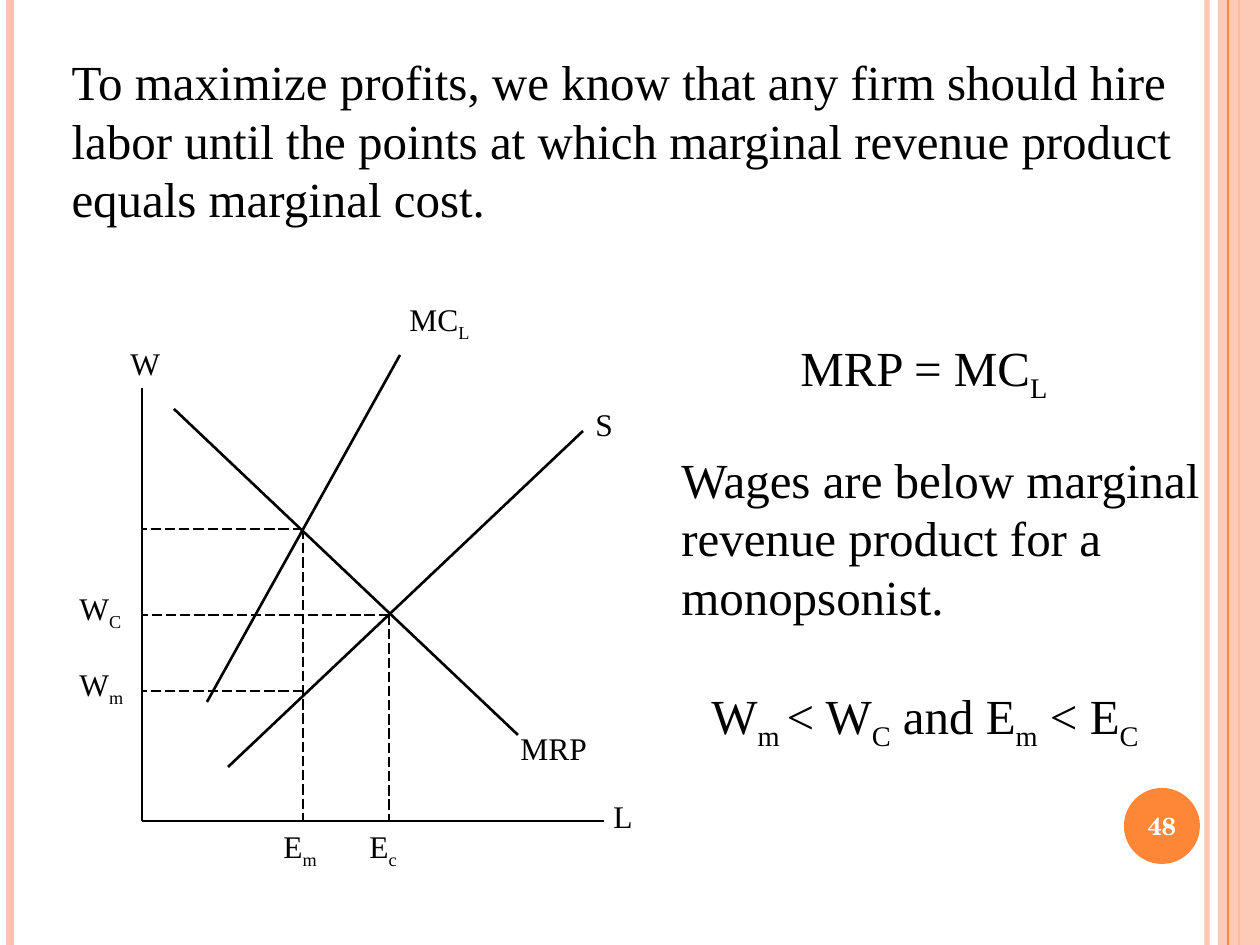
from typing import NamedTuple

from lxml import etree
from pptx import Presentation
from pptx.dml.color import RGBColor
from pptx.enum.dml import MSO_LINE
from pptx.enum.shapes import MSO_CONNECTOR, MSO_SHAPE
from pptx.enum.text import MSO_ANCHOR, MSO_AUTO_SIZE, PP_ALIGN
from pptx.oxml.ns import qn
from pptx.util import Emu, Pt

EMU_PER_PX = 914400 / 126
WIDTH, HEIGHT = 1260, 945
BLACK = RGBColor(0x00, 0x00, 0x00)
WHITE = RGBColor(0xFF, 0xFF, 0xFF)
ORANGE = RGBColor(0xFE, 0x86, 0x37)
PEACH = RGBColor(0xFE, 0xC3, 0xAE)
SERIF = "Times New Roman"
NUMBER_FONT = "TeX Gyre Schola"
STRAIGHT = MSO_CONNECTOR.STRAIGHT
RECTANGLE, OVAL = MSO_SHAPE.RECTANGLE, MSO_SHAPE.OVAL
LONG_DASH = MSO_LINE.LONG_DASH
FIXED_SIZE = MSO_AUTO_SIZE.NONE
TOP, MIDDLE = MSO_ANCHOR.TOP, MSO_ANCHOR.MIDDLE
LEFT, CENTER = PP_ALIGN.LEFT, PP_ALIGN.CENTER
BODY_SIZE, LABEL_SIZE = 28, 18


class Line(NamedTuple):
    x1: int
    y1: int
    x2: int
    y2: int
    width: float = 1.5
    color: RGBColor = BLACK
    dashed: bool = False
    opacity: int = 100


class Label(NamedTuple):
    """Text in which every second piece is a subscript."""
    x: int
    y: int
    w: int
    h: int
    pieces: tuple[str, ...]
    size: int = LABEL_SIZE
    wrap: bool = False
    anchor: MSO_ANCHOR = TOP
    align: PP_ALIGN = LEFT
    font: str = SERIF
    color: RGBColor = BLACK
    bold: bool = False


def px(value: int) -> Emu:
    return Emu(round(value * EMU_PER_PX))


def set_opacity(properties, percent: int) -> None:
    color = properties.find(".//" + qn("a:srgbClr"))
    etree.SubElement(color, qn("a:alpha"), val=str(percent * 1000))


def draw_line(slide, line: Line) -> None:
    ends = (px(v) for v in (line.x1, line.y1, line.x2, line.y2))
    connector = slide.shapes.add_connector(STRAIGHT, *ends)
    connector.line.width = Pt(line.width)
    connector.line.color.rgb = line.color
    if line.dashed:
        connector.line.dash_style = LONG_DASH
    properties = connector._element.spPr
    if line.opacity < 100:
        set_opacity(properties, line.opacity)
    etree.SubElement(properties, qn("a:effectLst"))


def draw_block(slide, kind: MSO_SHAPE, box: tuple[int, ...],
               color: RGBColor, opacity: int = 100) -> None:
    block = slide.shapes.add_shape(kind, *(px(v) for v in box))
    block.shadow.inherit = False
    block.fill.solid()
    block.fill.fore_color.rgb = color
    block.line.fill.background()
    if opacity < 100:
        set_opacity(block._element.spPr, opacity)


def write(shape, label: Label) -> None:
    shape.left, shape.top = px(label.x), px(label.y)
    shape.width, shape.height = px(label.w), px(label.h)
    frame = shape.text_frame
    frame.word_wrap = label.wrap
    frame.auto_size = FIXED_SIZE
    frame.vertical_anchor = label.anchor
    paragraph = frame.paragraphs[0]
    paragraph.alignment = label.align
    for index, piece in enumerate(label.pieces):
        run = paragraph.add_run()
        run.text = piece
        run.font.name = label.font
        run.font.size = Pt(label.size)
        run.font.bold = label.bold
        run.font.color.rgb = label.color
        if index % 2:
            run.font._element.set("baseline", "-25000")


def draw_label(slide, label: Label) -> None:
    write(slide.shapes.add_textbox(0, 0, 0, 0), label)


# Side bands and the page number's disc
SIDE_BANDS = (
    Line(1207, 0, 1207, HEIGHT, 3, PEACH, opacity=93),
    Line(10, 0, 10, HEIGHT, 4.5, PEACH),
)
OUTER_RULE = Line(1239, 0, 1239, HEIGHT, 1.5, ORANGE)
INNER_RULE = Line(1228, 0, 1228, HEIGHT, 0.75, ORANGE)
SIDE_PANEL = (1218, 0, 42, HEIGHT)
NUMBER_DISC = (1124, 788, 76, 76)

# Graph: axes, curves and the guides from each equilibrium
AXIS_X, AXIS_Y = 142, 821
MONOPSONY_X, COMPETITIVE_X = 303, 389
MRP_WAGE_Y, COMPETITIVE_Y, MONOPSONY_Y = 529, 615, 691
AXES = (Line(AXIS_X, AXIS_Y, AXIS_X, 388), Line(AXIS_X, AXIS_Y, 604, AXIS_Y))
CURVES = (
    Line(174, 409, 518, 735),  # MRP
    Line(228, 767, 583, 431),  # supply
    Line(207, 702, 400, 355),  # marginal cost of labor
)
WAGE_GUIDES = ((MONOPSONY_X, MRP_WAGE_Y), (COMPETITIVE_X, COMPETITIVE_Y),
               (MONOPSONY_X, MONOPSONY_Y))
LABOR_GUIDES = WAGE_GUIDES[:2]
GRAPH_LABELS = (
    Label(118, 338, 59, 55, ("W",)),
    Label(601, 791, 48, 55, ("L",)),
    Label(508, 723, 100, 55, ("MRP",)),
    Label(583, 399, 47, 55, ("S",)),
    Label(397, 294, 95, 55, ("MC", "L")),
    Label(271, AXIS_Y, 66, 55, ("E", "m")),
    Label(357, AXIS_Y, 58, 55, ("E", "c")),
    Label(67, 659, 77, 55, ("W", "m")),
    Label(67, 583, 74, 55, ("W", "C")),
)

# Statements
HEADLINE = Label(59, 45, 1142, 189, (
    "To maximize profits, we know that any firm should hire labor until the "
    "points at which marginal revenue product equals marginal cost.",),
    BODY_SIZE, wrap=True)
STATEMENTS = (
    Label(788, 335, 277, 72, ("MRP = MC", "L"), BODY_SIZE, anchor=MIDDLE),
    Label(669, 443, 566, 189, (
        "Wages are below marginal revenue product for a monopsonist.",),
        BODY_SIZE, wrap=True),
    Label(699, 679, 469, 72,
          ("W", "m ", "< W", "C", " and E", "m", " < E", "C"), BODY_SIZE),
)
PAGE_NUMBER = Label(1120, 790, 84, 72, ("48",), 14, True, MIDDLE, CENTER,
                    NUMBER_FONT, WHITE, True)


def main() -> None:
    deck = Presentation()
    deck.slide_width, deck.slide_height = px(WIDTH), px(HEIGHT)
    slide = deck.slides.add_slide(deck.slide_layouts[5])

    # Frame
    for line in SIDE_BANDS + (OUTER_RULE,):
        draw_line(slide, line)
    draw_block(slide, RECTANGLE, SIDE_PANEL, PEACH, 87)
    draw_line(slide, INNER_RULE)
    draw_block(slide, OVAL, NUMBER_DISC, ORANGE)

    # Graph
    for line in AXES + CURVES:
        draw_line(slide, line)
    for x, y in LABOR_GUIDES:
        draw_line(slide, Line(x, y, x, AXIS_Y, 0.75, dashed=True))
    for x, y in WAGE_GUIDES:
        draw_line(slide, Line(x, y, AXIS_X, y, 0.75, dashed=True))

    # Text
    write(slide.shapes.title, HEADLINE)
    for label in GRAPH_LABELS + STATEMENTS + (PAGE_NUMBER,):
        draw_label(slide, label)

    deck.save("out.pptx")


if __name__ == "__main__":
    main()
